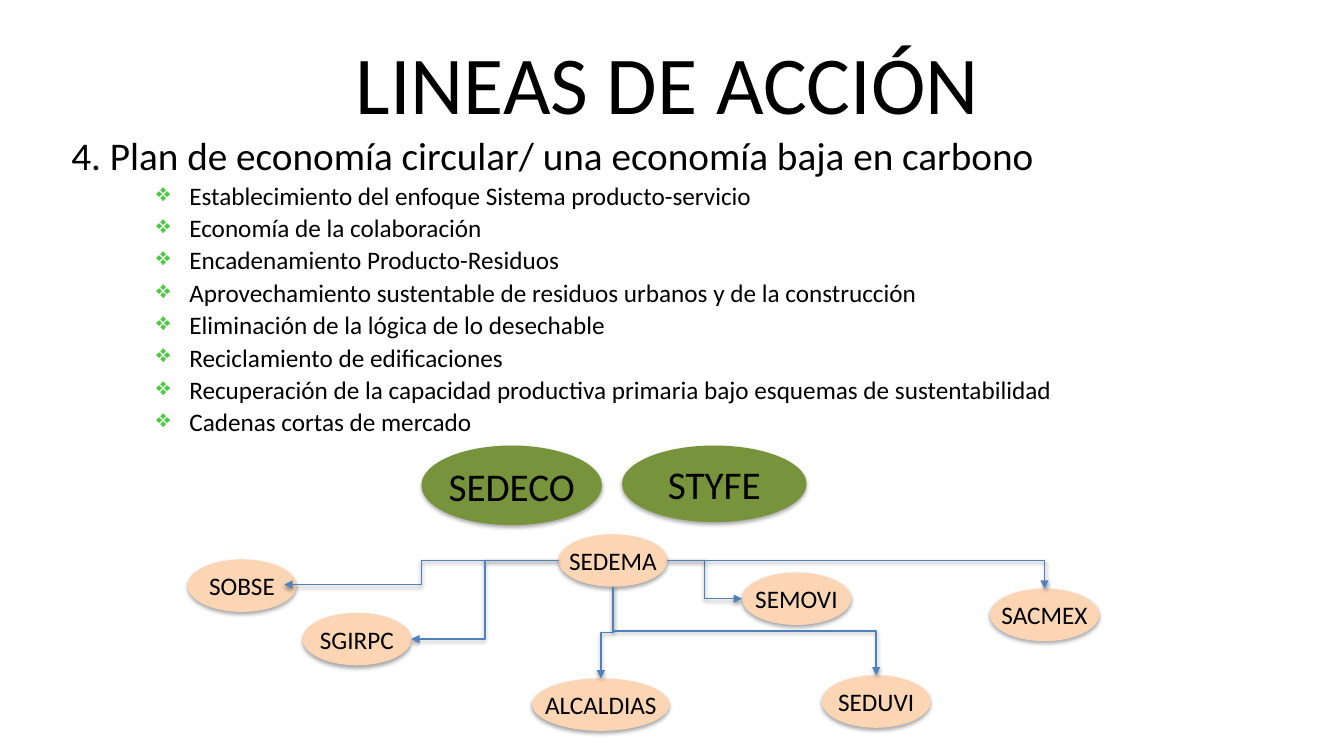
from lxml import etree
from pptx import Presentation
from pptx.dml.color import RGBColor
from pptx.enum.shapes import MSO_CONNECTOR, MSO_SHAPE
from pptx.enum.text import MSO_ANCHOR, PP_ALIGN
from pptx.oxml.ns import qn
from pptx.util import Inches, Pt

ELBOW = MSO_CONNECTOR.ELBOW
ELLIPSE = MSO_SHAPE.OVAL
CENTER = PP_ALIGN.CENTER
MIDDLE = MSO_ANCHOR.MIDDLE

BLACK, GREEN, PEACH = "000000", "77933C", "FCD5B5"
BULLET_GREEN, BLUE = "4CCA42", "4F81BD"

ACTIONS = [
    "Establecimiento del enfoque Sistema producto-servicio",
    "Economía de la colaboración",
    "Encadenamiento Producto-Residuos",
    "Aprovechamiento sustentable de residuos urbanos y de la construcción",
    "Eliminación de la lógica de lo desechable",
    "Reciclamiento de edificaciones",
    "Recuperación de la capacidad productiva primaria bajo esquemas de sustentabilidad",
    "Cadenas cortas de mercado",
]
LEADERS = [  # name, left, top, width, height
    ("SEDECO", 4.18, 4.42, 1.79, 0.79),
    ("STYFE", 6.17, 4.42, 1.83, 0.76),
]
AGENCIES = [  # name, left, top, width
    ("ALCALDIAS", 5.28, 6.73, 1.36),
    ("SACMEX", 9.82, 5.84, 1.08),
    ("SEDUVI", 8.15, 6.7, 1.08),
    ("SEMOVI", 7.36, 5.68, 1.08),
    ("SEDEMA", 5.54, 5.3, 1.08),
    ("SGIRPC", 3, 6.08, 1.08),
    ("SOBSE", 1.86, 5.55, 1.08),
]
AGENCY_HEIGHT = 0.52
HUB_LEFT, HUB_RIGHT, HUB_BOTTOM = (5.54, 5.56), (6.62, 5.56), (6.08, 5.82)


def color(hex_code):
    return RGBColor.from_string(hex_code)


def add_xml(parent, tag, **attributes):
    element = etree.SubElement(parent, qn(tag))
    for name, value in attributes.items():
        element.set(name, str(value))
    return element


class ActionSlide:
    font = "Calibri"

    def __init__(self, deck):
        self.slide = deck.slides.add_slide(deck.slide_layouts[5])
        self.shapes = self.slide.shapes

    def format(self, paragraph, size):
        paragraph.font.name = self.font
        paragraph.font.size = Pt(size)
        paragraph.font.color.rgb = color(BLACK)

    def soften(self, shape, opacity, distance):
        """Give the shape a soft black shadow that falls straight down."""
        effects = add_xml(shape._element.spPr, "a:effectLst")
        shadow = add_xml(effects, "a:outerShdw", blurRad=Pt(3.1), dist=Pt(distance),
                         dir=90 * 60000, rotWithShape=0)
        black = add_xml(shadow, "a:srgbClr", val=BLACK)
        add_xml(black, "a:alpha", val=opacity * 1000)

    def title(self, text, left, top, width, height):
        title = self.shapes.title
        title.left, title.top = Inches(left), Inches(top)
        title.width, title.height = Inches(width), Inches(height)
        title.text_frame.text = text
        title.text_frame.vertical_anchor = MIDDLE
        paragraph = title.text_frame.paragraphs[0]
        paragraph.alignment = CENTER
        self.format(paragraph, 58.7)

    def plan(self, heading, actions, left, top, width, height):
        box = self.shapes.add_textbox(Inches(left), Inches(top), Inches(width), Inches(height))
        frame = box.text_frame
        frame.word_wrap = True
        first = frame.paragraphs[0]
        first.text = heading
        first.space_before = Pt(5.6)
        self.format(first, 28)
        for action in actions:
            paragraph = frame.add_paragraph()
            paragraph.text = action
            paragraph.level = 2
            paragraph.line_spacing = 1.07
            self.format(paragraph, 18)
            self.bullet(paragraph)

    def bullet(self, paragraph):
        properties = paragraph._p.get_or_add_pPr()
        properties.set("marL", str(Inches(1.17)))
        properties.set("indent", str(Inches(-0.33)))
        add_xml(add_xml(properties, "a:buClr"), "a:srgbClr", val=BULLET_GREEN)
        add_xml(properties, "a:buChar", char="❖")

    def ellipse(self, name, left, top, width, height, fill, size):
        oval = self.shapes.add_shape(ELLIPSE, Inches(left), Inches(top),
                                     Inches(width), Inches(height))
        oval.fill.solid()
        oval.fill.fore_color.rgb = color(fill)
        oval.line.fill.background()
        self.soften(oval, 35, 1.8)
        frame = oval.text_frame
        frame.word_wrap = False
        frame.vertical_anchor = MIDDLE
        frame.margin_left = frame.margin_right = 0
        frame.margin_top = frame.margin_bottom = 0
        frame.text = name
        frame.paragraphs[0].alignment = CENTER
        self.format(frame.paragraphs[0], size)

    def arrow(self, start, end):
        (x1, y1), (x2, y2) = start, end
        elbow = self.shapes.add_connector(ELBOW, Inches(x1), Inches(y1), Inches(x2), Inches(y2))
        elbow.line.color.rgb = color(BLUE)
        elbow.line.width = Pt(1)
        add_xml(elbow.line._get_or_add_ln(), "a:tailEnd", type="triangle")
        self.soften(elbow, 38, 1.6)
        return elbow

    def arrow_down(self, start, end):
        """Draw an elbow that leaves and arrives vertically, as a turned horizontal one."""
        (x1, y1), (x2, y2) = start, end
        middle_x, middle_y = (x1 + x2) / 2, (y1 + y2) / 2
        half_width, half_height = (y2 - y1) / 2, abs(x2 - x1) / 2
        side = 1 if x2 < x1 else -1
        elbow = self.arrow((middle_x - side * half_width, middle_y - half_height),
                           (middle_x + side * half_width, middle_y + half_height))
        turn = 90 if side == 1 else 270
        elbow._element.spPr.find(qn("a:xfrm")).set("rot", str(turn * 60000))

    def arrow_corner(self, start, end):
        """Draw an elbow with a single bend."""
        elbow = self.arrow(start, end)
        elbow._element.spPr.find(qn("a:prstGeom")).set("prst", "bentConnector2")


def main():
    deck = Presentation()
    deck.slide_width, deck.slide_height = Inches(13.33), Inches(7.5)
    page = ActionSlide(deck)
    page.title("LINEAS DE ACCIÓN", 0.62, 0.18, 12, 1.25)
    page.plan("4. Plan de economía circular/ una economía baja en carbono",
              ACTIONS, 0.61, 1.25, 12, 3.2)
    for name, left, top, width in AGENCIES:
        page.ellipse(name, left, top, width, AGENCY_HEIGHT, PEACH, 18)
    page.arrow(HUB_LEFT, (2.82, 5.8))
    page.arrow_down(HUB_BOTTOM, (5.96, 6.73))
    page.arrow(HUB_RIGHT, (7.36, 5.94))
    page.arrow_down(HUB_BOTTOM, (8.69, 6.7))
    page.arrow(HUB_LEFT, (4.08, 6.34))
    page.arrow_corner(HUB_RIGHT, (10.36, 5.84))
    for leader in LEADERS:
        page.ellipse(*leader, GREEN, 28)
    deck.save("out.pptx")


if __name__ == "__main__":
    main()
